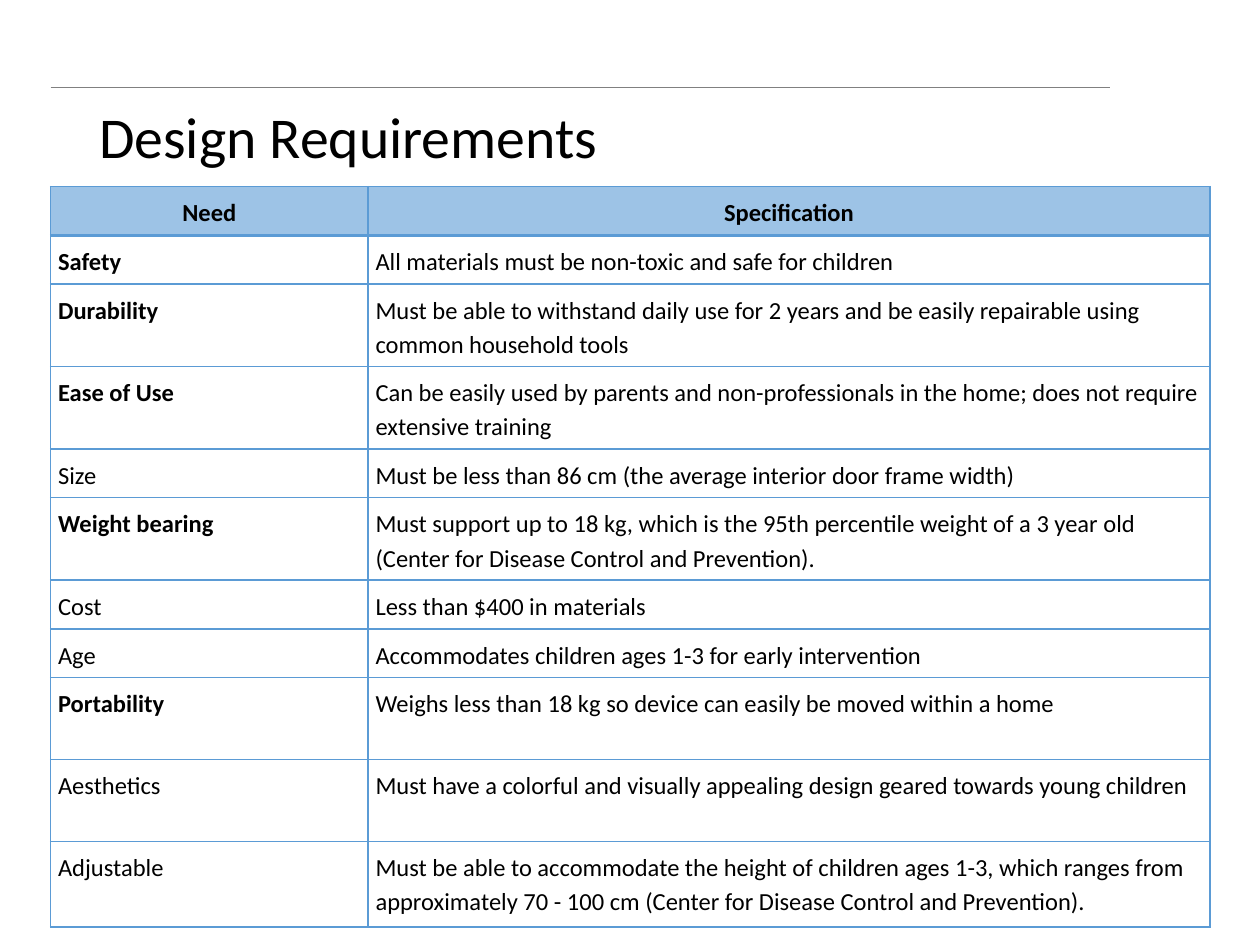
from lxml.etree import SubElement
from pptx import Presentation
from pptx.dml.color import RGBColor
from pptx.enum.shapes import MSO_CONNECTOR
from pptx.enum.text import MSO_ANCHOR, PP_ALIGN
from pptx.oxml.ns import qn
from pptx.util import Cm, Pt

COLORS = {"text": "000000", "rule": "808080", "border": "5B9BD5", "header": "9DC3E6"}
FONT = "Calibri"

SHORT, TALL, LAST = 0.94, 1.65, 1.73  # row heights in cm
COL_WIDTHS = (6.4, 16.97)

# need, specification, need is bold, row height
REQUIREMENTS = [
    ("Safety", "All materials must be non-toxic and safe for children", True, SHORT),
    ("Durability", "Must be able to withstand daily use for 2 years and be easily "
     "repairable using common household tools", True, TALL),
    ("Ease of Use", "Can be easily used by parents and non-professionals in the home; "
     "does not require extensive training", True, TALL),
    ("Size", "Must be less than 86 cm (the average interior door frame width)", False, SHORT),
    ("Weight bearing", "Must support up to 18 kg, which is the 95th percentile weight of a "
     "3 year old (Center for Disease Control and Prevention).", True, TALL),
    ("Cost", "Less than $400 in materials", False, SHORT),
    ("Age", "Accommodates children ages 1-3 for early intervention", False, SHORT),
    ("Portability", "Weighs less than 18 kg so device can easily be moved within a home",
     True, TALL),
    ("Aesthetics", "Must have a colorful and visually appealing design geared towards "
     "young children", False, TALL),
    ("Adjustable", "Must be able to accommodate the height of children ages 1-3, which "
     "ranges from approximately 70 - 100 cm (Center for Disease Control and Prevention).",
     False, LAST),
]


def rgb(name):
    return RGBColor.from_string(COLORS[name])


class SlideBuilder:
    def __init__(self, slide):
        self.slide = slide

    def text(self, tf, text, size, bold=False, align=PP_ALIGN.LEFT, spacing=1.0):
        p = tf.paragraphs[0]
        p.alignment = align
        p.line_spacing = spacing
        r = p.add_run()
        r.text = text
        r.font.name = FONT
        r.font.size = Pt(size)
        r.font.bold = bold
        r.font.color.rgb = rgb("text")

    def rule(self, x1, x2, y):
        line = self.slide.shapes.add_connector(
            MSO_CONNECTOR.STRAIGHT, Cm(x1), Cm(y), Cm(x2), Cm(y))
        line.line.color.rgb = rgb("rule")
        line.line.width = Pt(0.25)
        SubElement(line._element.spPr, qn("a:effectLst"))

    def title(self, text, x, y, w, h):
        tf = self.slide.shapes.add_textbox(Cm(x), Cm(y), Cm(w), Cm(h)).text_frame
        tf.word_wrap = True
        tf.vertical_anchor = MSO_ANCHOR.MIDDLE
        self.text(tf, text, 33, spacing=0.9)

    def borders(self, cell, bottom):
        tc_pr = cell._tc.get_or_add_tcPr()
        for side, width in (("L", 1), ("R", 1), ("T", 1), ("B", bottom)):
            ln = SubElement(tc_pr, qn(f"a:ln{side}"), w=str(Pt(width)))
            fill = SubElement(ln, qn("a:solidFill"))
            SubElement(fill, qn("a:srgbClr"), val=COLORS["border"])

    def cell(self, cell, text, bold, header=False):
        cell.margin_left = cell.margin_right = Cm(0.15)
        cell.margin_top = cell.margin_bottom = Cm(0.15)
        self.borders(cell, bottom=2 if header else 1)
        if header:
            cell.fill.solid()
            cell.fill.fore_color.rgb = rgb("header")
        else:
            cell.fill.background()
        align = PP_ALIGN.CENTER if header else PP_ALIGN.LEFT
        self.text(cell.text_frame, text, 14, bold, align, 1.15)

    def table(self, headings, rows, x, y):
        heights = [SHORT] + [row[-1] for row in rows]
        table = self.slide.shapes.add_table(
            len(heights), len(COL_WIDTHS), Cm(x), Cm(y),
            Cm(sum(COL_WIDTHS)), Cm(sum(heights))).table
        table.horz_banding = False
        for column, width in zip(table.columns, COL_WIDTHS):
            column.width = Cm(width)
        for row, height in zip(table.rows, heights):
            row.height = Cm(height)
        for j, heading in enumerate(headings):
            self.cell(table.cell(0, j), heading, True, header=True)
        for i, (need, specification, bold, _) in enumerate(rows, 1):
            self.cell(table.cell(i, 0), need, bold)
            self.cell(table.cell(i, 1), specification, False)


def main():
    prs = Presentation()
    prs.slide_width, prs.slide_height = Cm(25.4), Cm(19.05)
    s = SlideBuilder(prs.slides.add_slide(prs.slide_layouts[6]))
    s.rule(1.02, 22.38, 1.75)
    s.title("Design Requirements", 1.75, 0.97, 21.9, 3.68)
    s.table(("Need", "Specification"), REQUIREMENTS, 1.02, 3.76)
    prs.save("out.pptx")


if __name__ == "__main__":
    main()
